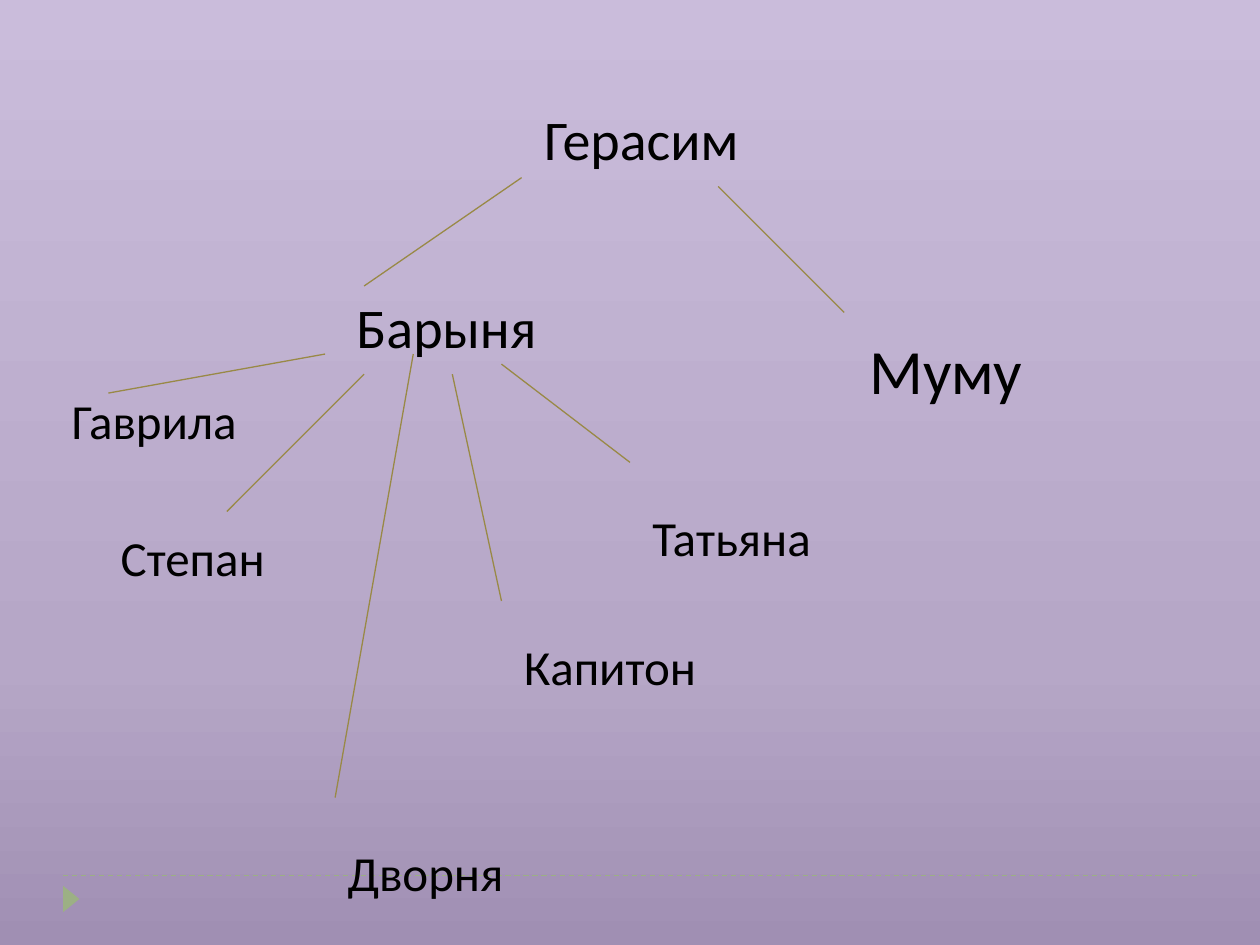
from copy import deepcopy

from pptx import Presentation
from pptx.dml.color import RGBColor
from pptx.enum import dml, shapes, text
from pptx.oxml.ns import qn
from pptx.util import Inches, Pt

BACKGROUND = [(0, "A08FB3"), (0.3, "B6A7C7"), (1, "CABCDB")]
FOOTER_GREEN, BRANCH_OLIVE, BLACK = "9CB084", "998946", "000000"

# Name, left, top, width, height, text size
CHARACTERS = [
    ("Герасим", 4.22, 0.78, 1.8, 0.64, 32),
    ("Барыня", 2.73, 2.27, 1.65, 0.64, 32),
    ("Муму", 6.8, 2.58, 1.58, 0.71, 36),
    ("Татьяна", 5.08, 3.98, 1.47, 0.57, 28),
    ("Капитон", 4.06, 5, 1.58, 0.57, 28),
    ("Гаврила", 0.47, 3.05, 1.56, 0.57, 28),
    ("Степан", 0.86, 4.14, 1.72, 0.57, 28),
    ("Дворня", 2.66, 6.64, 1.45, 0.57, 28),
]

# Start x, y and end x, y
GERASIM_BRANCHES = [(5.7, 1.48, 6.7, 2.48), (4.14, 1.41, 2.89, 2.27)]
LADY_BRANCHES = [
    (3.98, 2.89, 5, 3.67),
    (3.59, 2.97, 3.98, 4.77),
    (2.89, 2.97, 1.8, 4.06),
    (2.58, 2.81, 0.86, 3.12),
    (3.28, 2.81, 2.66, 6.33),
]


def color(hex_string):
    return RGBColor.from_string(hex_string)


def set_all(target, values):
    for name, value in values.items():
        setattr(target, name, value)


def add_line(slide, ends, hex_string, dash=None):
    line = slide.shapes.add_connector(
        shapes.MSO_CONNECTOR.STRAIGHT, *(Inches(v) for v in ends))
    line.line.color.rgb = color(hex_string)
    set_all(line.line, {"width": Pt(0.75), "dash_style": dash})
    line._element.spPr.append(line._element.makeelement(qn("a:effectLst"), {}))


def paint_background(slide):
    fill = slide.background.fill
    fill.gradient()
    fill.gradient_angle = 90
    # The default gradient has two stops; a third is needed
    stop_list = slide._element.xpath(".//a:gsLst")[0]
    stop_list.append(deepcopy(stop_list[-1]))
    for stop, (position, hex_string) in zip(fill.gradient_stops, BACKGROUND):
        stop.position = position
        stop.color.rgb = color(hex_string)


def add_footer(slide, left, top, width):
    add_line(slide, (left, top, left + width, top), FOOTER_GREEN,
             dml.MSO_LINE.DASH)
    marker = slide.shapes.add_shape(
        shapes.MSO_SHAPE.ISOSCELES_TRIANGLE, Inches(left - 0.04),
        Inches(top + 0.12), Inches(0.21), Inches(0.13))
    marker.rotation = 90
    marker.shadow.inherit = False
    marker.fill.solid()
    marker.fill.fore_color.rgb = color(FOOTER_GREEN)
    marker.line.fill.background()


def add_character(slide, name, left, top, width, height, size):
    label = slide.shapes.add_textbox(
        *(Inches(v) for v in (left, top, width, height)))
    set_all(label.text_frame, {
        "word_wrap": False, "auto_size": text.MSO_AUTO_SIZE.SHAPE_TO_FIT_TEXT})
    run = label.text_frame.paragraphs[0].add_run()
    run.text = name
    set_all(run.font, {"name": "Calibri", "size": Pt(size)})
    run.font.color.rgb = color(BLACK)


def main():
    prs = Presentation()
    set_all(prs, {"slide_width": Inches(10), "slide_height": Inches(7.5)})
    slide = prs.slides.add_slide(prs.slide_layouts[6])

    paint_background(slide)
    add_footer(slide, 0.5, 6.95, 9)

    # Family tree: branches first, names on top
    for ends in GERASIM_BRANCHES + LADY_BRANCHES:
        add_line(slide, ends, BRANCH_OLIVE)
    for character in CHARACTERS:
        add_character(slide, *character)

    prs.save("out.pptx")


if __name__ == "__main__":
    main()
